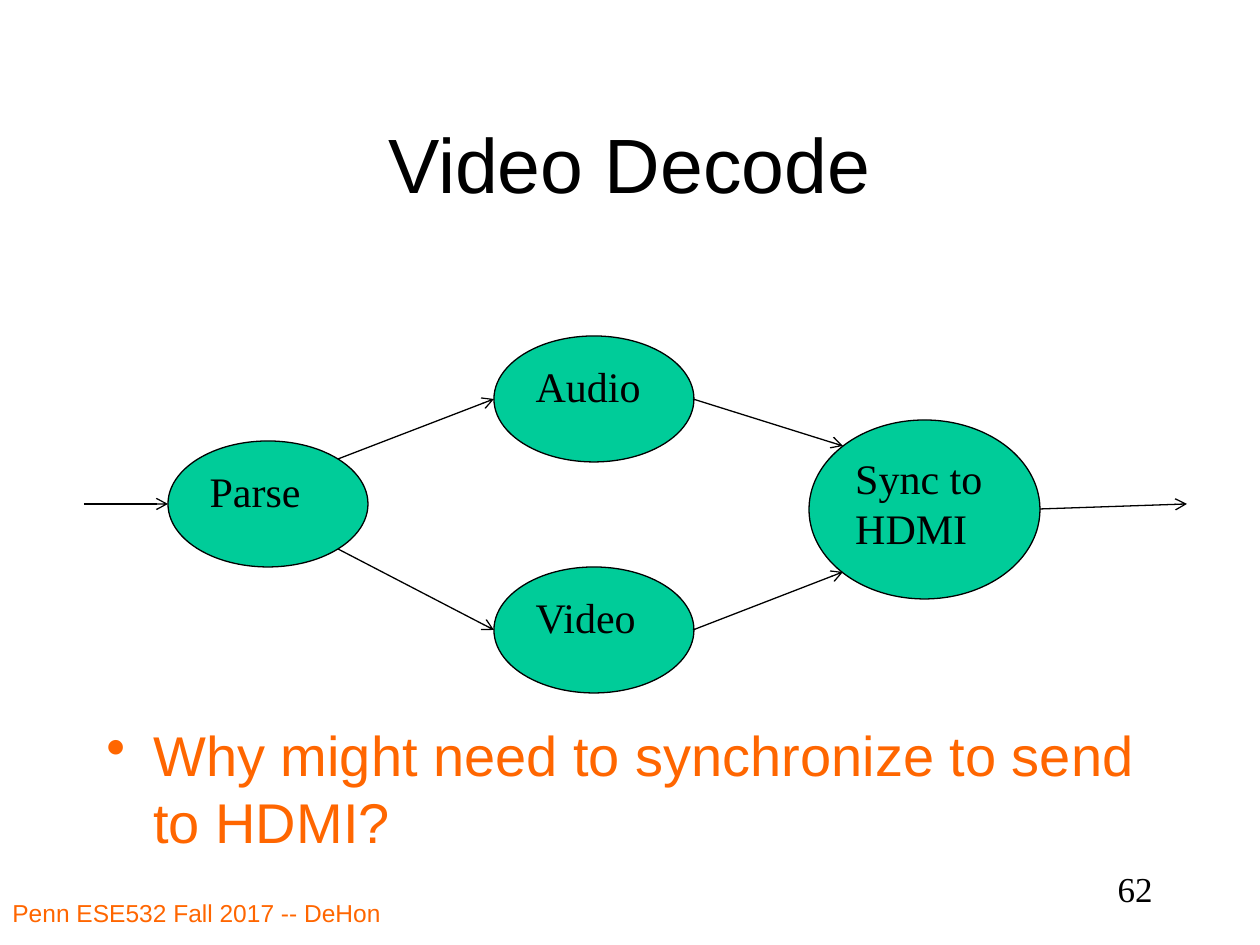
from lxml import etree
from pptx import Presentation
from pptx import util as u
from pptx.dml.color import RGBColor
from pptx.enum import shapes, text
from pptx.oxml.ns import qn

PX = 914400 // 126
SANS, SERIF = "Arial", "Times New Roman"
BLACK, ORANGE, GREEN = "000000", "FF6600", "00CC99"


def paint(hue):
    return RGBColor.from_string(hue)


def write(shape, words, size, font, hue, align="LEFT", anchor="TOP"):
    frame = shape.text_frame
    frame.text = words
    frame.word_wrap = True
    frame.vertical_anchor = getattr(text.MSO_ANCHOR, anchor)
    para = frame.paragraphs[0]
    para.alignment = getattr(text.PP_ALIGN, align)
    face = para.runs[0].font
    face.size, face.name = u.Pt(size), font
    face.color.rgb = paint(hue)
    return para


deck = Presentation()
deck.slide_width, deck.slide_height = u.Inches(10), u.Inches(7.5)
slide = deck.slides.add_slide(deck.slide_layouts[6])
items = slide.shapes

labels = [
    ((94, 84, 1071, 158), "Video Decode", 44, SANS, BLACK, "CENTER", "MIDDLE"),
    ((0, 892, 577, 53), "Penn ESE532 Fall 2017 -- DeHon", 14, SANS, ORANGE),
    ((903, 861, 262, 63), "62", 20, SERIF, BLACK, "RIGHT"),
]
for place, *style in labels:
    write(items.add_textbox(*[n * PX for n in place]), *style)

nodes = [
    ("Parse", 168, 441, 200, 126),
    ("Audio", 494, 336, 200, 126),
    ("Sync to HDMI", 809, 420, 231, 179),
    ("Video", 494, 567, 200, 126),
]
for name, *place in nodes:
    node = items.add_shape(shapes.MSO_SHAPE.OVAL, *[n * PX for n in place])
    node.shadow.inherit = False
    node.fill.solid()
    node.fill.fore_color.rgb = paint(GREEN)
    node.line.color.rgb = paint(BLACK)
    node.line.width = u.Pt(0.75)
    write(node, name, 24, SERIF, BLACK)

arrows = [
    (338, 549, 494, 630),
    (338, 459, 494, 399),
    (693, 399, 843, 446),
    (693, 630, 843, 572),
    (1040, 509, 1187, 504),
    (84, 504, 168, 504),
]
for ends in arrows:
    arrow = items.add_connector(shapes.MSO_CONNECTOR.STRAIGHT, *[n * PX for n in ends])
    arrow.line.color.rgb = paint(BLACK)
    arrow.line.width = u.Pt(0.75)
    etree.SubElement(arrow.line._get_or_add_ln(), qn("a:tailEnd"), type="arrow")
    etree.SubElement(arrow._element.spPr, qn("a:effectLst"))

body = items.add_textbox(*[n * PX for n in (94, 714, 1071, 126)])
para = write(body, "Why might need to synchronize to send to HDMI?", 32, SANS, ORANGE)
props = para._p.get_or_add_pPr()
props.set("marL", str(47 * PX))
props.set("indent", str(-47 * PX))
space = etree.SubElement(props, qn("a:spcBef"))
etree.SubElement(space, qn("a:spcPct"), val="20000")
etree.SubElement(props, qn("a:buChar"), char="•")

deck.save("out.pptx")
